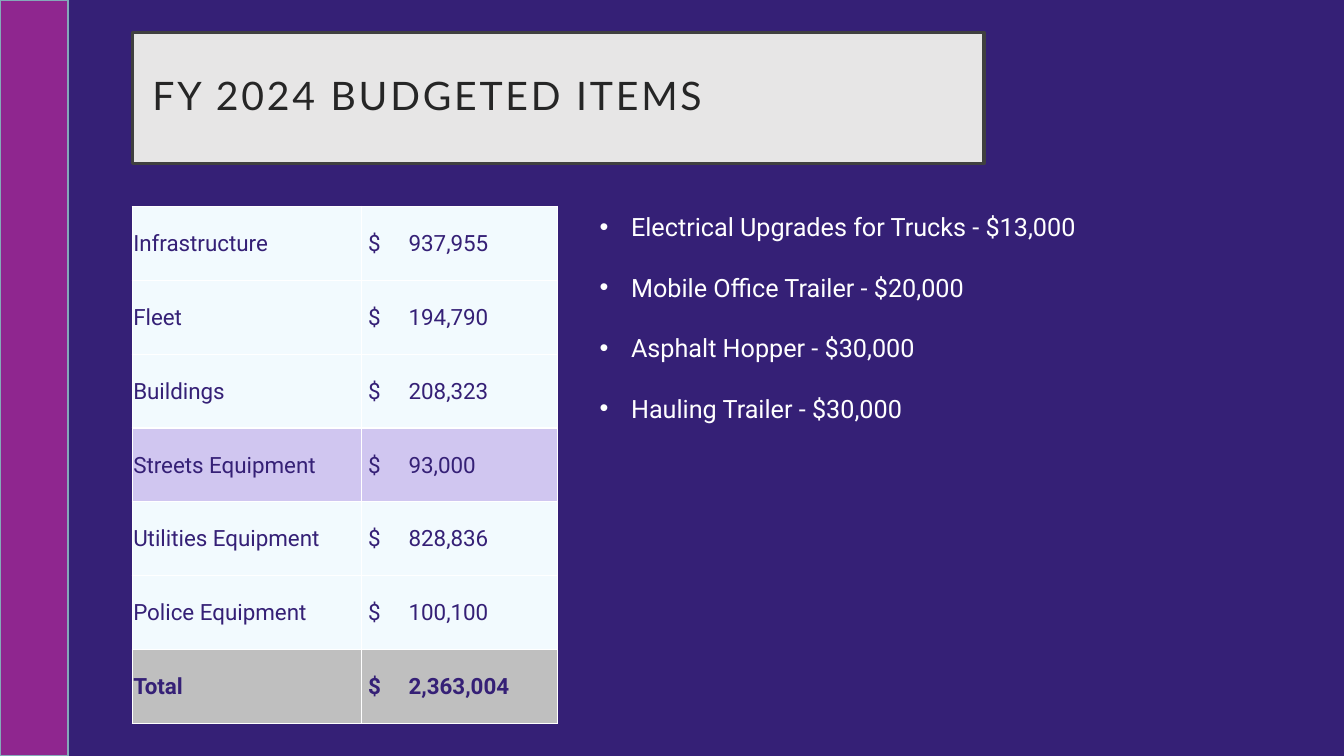
"""Build the FY 2024 budgeted items slide."""
from dataclasses import dataclass

from lxml import etree
from pptx import Presentation
from pptx.dml.color import RGBColor
from pptx.enum import shapes, text
from pptx.oxml import ns
from pptx.util import Pt


@dataclass(frozen=True)
class Theme:
    background: str = "352076"
    sidebar: str = "8F268F"
    sidebar_line: str = "84A9B9"
    title_fill: str = "E7E6E6"
    title_line: str = "404040"
    title_text: str = "262626"
    row: str = "F2FAFE"
    highlight: str = "D0C6F0"
    total: str = "BFBFBF"
    white: str = "FFFFFF"
    heading_font: str = "Lato"
    body_font: str = "Roboto"
    title_size: int = 28
    list_size: int = 18
    table_size: int = 16


def add_panel(s, box, fill, line, width):
    sp = s.shapes.add_shape(shapes.MSO_SHAPE.RECTANGLE, *map(Pt, box))
    sp.shadow.inherit = False
    sp.fill.solid()
    sp.fill.fore_color.rgb = RGBColor.from_string(fill)
    sp.line.color.rgb = RGBColor.from_string(line)
    sp.line.width = Pt(width)
    return sp


def style_run(r, font, size, color, bold=False):
    r.font.name = font
    r.font.size = Pt(size)
    r.font.bold = bold
    r.font.color.rgb = RGBColor.from_string(color)


theme = Theme()
prs = Presentation()
prs.slide_width, prs.slide_height = Pt(960), Pt(540)
s = prs.slides.add_slide(prs.slide_layouts[6])
s.background.fill.solid()
s.background.fill.fore_color.rgb = RGBColor.from_string(theme.background)

add_panel(s, (0, 0, 48.5, 540), theme.sidebar, theme.sidebar_line, 1)

title = add_panel(s, (94.5, 23.2, 608.5, 93.6), theme.title_fill, theme.title_line, 2.5)
tf = title.text_frame
tf.word_wrap = True
tf.vertical_anchor = text.MSO_ANCHOR.MIDDLE
tf.margin_left = tf.margin_right = tf.margin_top = tf.margin_bottom = Pt(14.4)
tf.text = "FY 2024 BUDGETED ITEMS"
p = tf.paragraphs[0]
p.alignment = text.PP_ALIGN.LEFT
p.line_spacing = 0.9
style_run(p.runs[0], theme.heading_font, theme.title_size, theme.title_text)
p.runs[0].font._element.set("spc", "200")

budget = [
    ("Infrastructure", "937,955", theme.row),
    ("Fleet", "194,790", theme.row),
    ("Buildings", "208,323", theme.row),
    ("Streets Equipment", "93,000", theme.highlight),
    ("Utilities Equipment", "828,836", theme.row),
    ("Police Equipment", "100,100", theme.row),
    ("Total", "2,363,004", theme.total),
]
row_height = 52.77
table = s.shapes.add_table(
    len(budget), 2, Pt(94.5), Pt(147.5), Pt(303.5), Pt(row_height * len(budget))
).table
table.first_row = table.horz_banding = False
table.columns[0].width, table.columns[1].width = Pt(163.8), Pt(139.7)

for i, (item, amount, fill) in enumerate(budget):
    table.rows[i].height = Pt(row_height)
    for j, value in enumerate((item, f"$\t{amount}")):
        cell = table.cell(i, j)
        cell.vertical_anchor = text.MSO_ANCHOR.MIDDLE
        cell.margin_left = Pt((0.7, 4.7)[j])
        cell.margin_right = cell.margin_top = Pt(0.7)
        cell.margin_bottom = 0
        tcPr = cell._tc.get_or_add_tcPr()
        for side in ("lnL", "lnR", "lnT", "lnB"):
            border = etree.SubElement(tcPr, ns.qn(f"a:{side}"), w=str(Pt(1)))
            paint = etree.SubElement(border, ns.qn("a:solidFill"))
            etree.SubElement(paint, ns.qn("a:srgbClr"), val=theme.white)
        cell.fill.solid()
        cell.fill.fore_color.rgb = RGBColor.from_string(fill)
        p = cell.text_frame.paragraphs[0]
        p.text = value
        if j == 1:
            tabs = etree.SubElement(p._p.get_or_add_pPr(), ns.qn("a:tabLst"))
            etree.SubElement(tabs, ns.qn("a:tab"), pos=str(Pt(28.9)), algn="l")
        style_run(p.runs[0], theme.body_font, theme.table_size, theme.background,
                  item == "Total")

purchases = [
    "Electrical Upgrades for Trucks - $13,000",
    "Mobile Office Trailer - $20,000",
    "Asphalt Hopper - $30,000",
    "Hauling Trailer - $30,000",
]
tf = s.shapes.add_textbox(Pt(421.2), Pt(147.5), Pt(444.2), Pt(159.8)).text_frame
tf.word_wrap = True
tf.text = "\n".join(purchases)
for i, p in enumerate(tf.paragraphs):
    pPr = p._p.get_or_add_pPr()
    pPr.set("marL", str(Pt(22.5)))
    pPr.set("indent", str(Pt(-22.5)))
    etree.SubElement(pPr, ns.qn("a:buFont"), typeface="Arial")
    etree.SubElement(pPr, ns.qn("a:buChar"), char="•")
    if i:
        p.space_before = Pt(21.6)
    style_run(p.runs[0], theme.body_font, theme.list_size, theme.white)

prs.save("out.pptx")
